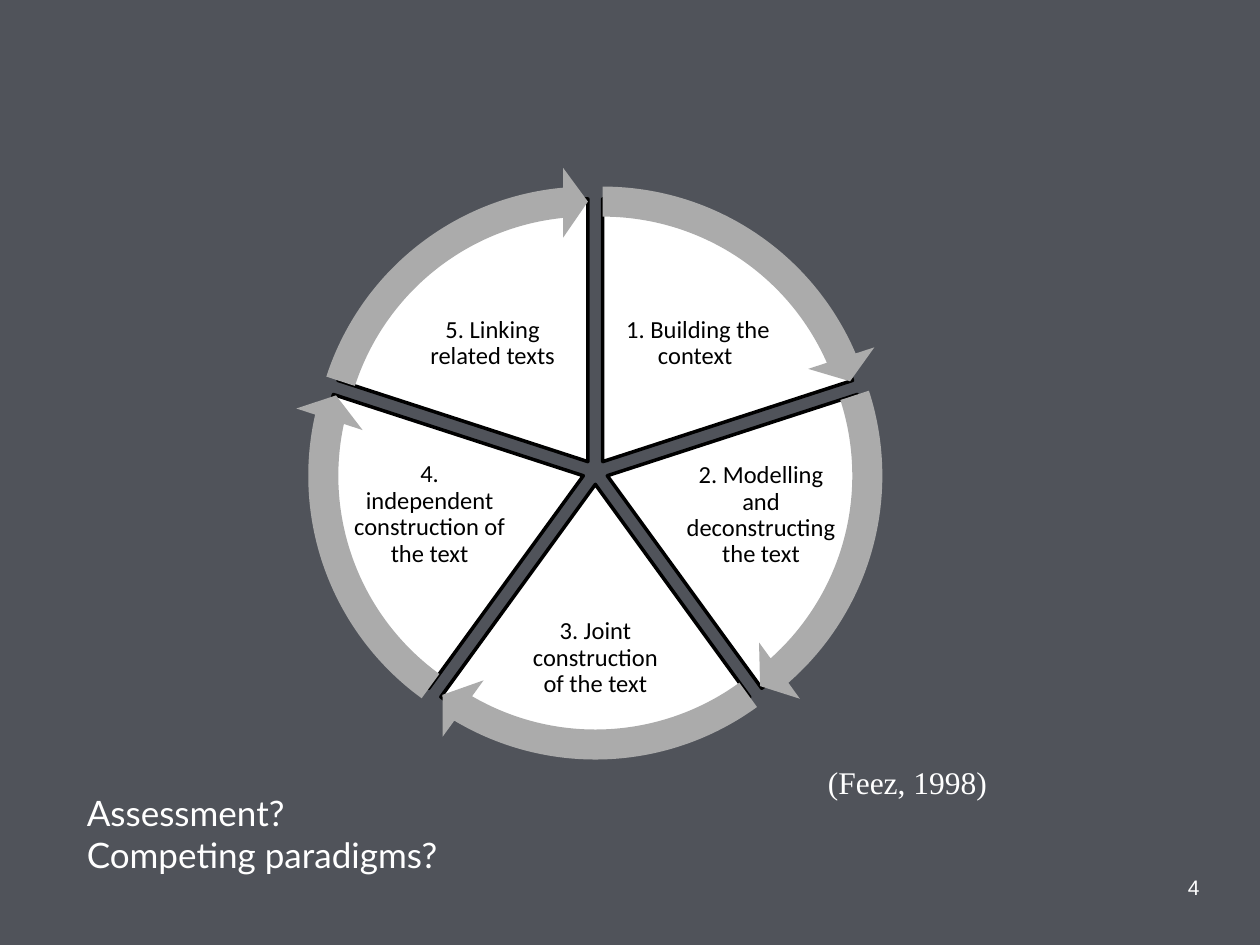
"""Build a slide showing a five-stage teaching cycle."""
from dataclasses import dataclass
from math import cos, radians, sin

from pptx import Presentation
from pptx.dml.color import RGBColor as Color
from pptx.enum.shapes import MSO_SHAPE as Preset
from pptx.enum.text import MSO_ANCHOR as Anchor, PP_ALIGN as Align
from pptx.util import Inches, Pt


@dataclass(frozen=True)
class Theme:
    background: Color = Color(0x50, 0x53, 0x5A)
    light: Color = Color(0xFF, 0xFF, 0xFF)
    dark: Color = Color(0, 0, 0)
    arrow: Color = Color(0xAB, 0xAB, 0xAB)
    label_size: int = 14
    question_size: int = 20
    citation_size: int = 18
    number_size: int = 12
    label_font: str = "Calibri"
    question_font: str = "Lato"
    citation_font: str = "Times New Roman"
    number_font: str = "Arial"


THEME = Theme()
COLUMNS, ROWS = 100, 75
CELL = Inches(0.1)
HUB = (47.25, 37.45)
SLICE_OFFSET = 1
PIE_SIZE, ARROW_SIZE = 41.7, 46.8
SWEEP = 72
ARROW_SWEEP = 66.54
DEGREE = 0.6
STAGES = [
    ("1. Building the context ", (48.7, 22.8, 13.4, 8.9)),
    ("2. Modelling and deconstructing the text", (54.2, 35.9, 12.4, 10)),
    ("3. Joint construction of the text", (41.3, 46.8, 11.9, 10.9)),
    ("4. independent construction of the text", (27.9, 35.9, 12.4, 9.9)),
    ("5. Linking related texts", (32.4, 22.8, 13.4, 8.9)),
]


def grid(*cells):
    """Turn grid cells into slide lengths."""
    return [round(cell * CELL) for cell in cells]


def add_text(shapes, box, lines, font, size, color, align=Align.LEFT, inset=0):
    """Add a wrapped text box with one paragraph per line and return its frame."""
    frame = shapes.add_textbox(*grid(*box)).text_frame
    frame.word_wrap = True
    if inset is not None:
        frame.margin_left = frame.margin_right = Inches(inset)
        frame.margin_top = frame.margin_bottom = Inches(inset)
    for index, line in enumerate(lines):
        paragraph = frame.add_paragraph() if index else frame.paragraphs[0]
        paragraph.alignment = align
        run = paragraph.add_run()
        run.text = line
        run.font.name, run.font.size = font, Pt(size)
        run.font.color.rgb = color
    return frame


def add_round(shapes, preset, index, size, fill, adjustments):
    """Add a round shape pushed out from the hub along its stage's bisector."""
    bisector = radians(270 + SWEEP * (index + 0.5))
    left = HUB[0] + SLICE_OFFSET * cos(bisector) - size / 2
    top = HUB[1] + SLICE_OFFSET * sin(bisector) - size / 2
    shape = shapes.add_shape(preset, *grid(left, top, size, size))
    shape.shadow.inherit = False
    shape.fill.solid()
    shape.fill.fore_color.rgb = fill
    for position, value in enumerate(adjustments):
        shape.adjustments[position] = value
    return shape


def add_slice(shapes, index):
    """Add the outlined pie slice of one stage."""
    start = 270 + SWEEP * index
    angles = [angle % 360 * DEGREE for angle in (start, start + SWEEP)]
    piece = add_round(shapes, Preset.PIE, index, PIE_SIZE, THEME.light, angles)
    piece.line.color.rgb = THEME.dark
    piece.line.width = Pt(2)


def add_label(shapes, text, box):
    """Add the centred label of one stage."""
    frame = add_text(shapes, box, [text], THEME.label_font, THEME.label_size,
                     THEME.dark, Align.CENTER, 0.02)
    frame.vertical_anchor = Anchor.MIDDLE
    frame.paragraphs[0].line_spacing = 0.9


def add_arrow(shapes, index):
    """Add the circular arrow along the rim of one stage."""
    start = (270 + SWEEP * index) % 360
    end = (start + ARROW_SWEEP) % 360
    adjustments = [0.051, 3.275, end * DEGREE, start * DEGREE, 0.059]
    arrow = add_round(shapes, Preset.CIRCULAR_ARROW, index, ARROW_SIZE,
                      THEME.arrow, adjustments)
    arrow.line.fill.background()


def add_cycle(slide):
    """Add the grouped cycle with its slices, labels and arrows."""
    shapes = slide.shapes.add_group_shape().shapes
    for index, (text, box) in enumerate(STAGES):
        add_slice(shapes, index)
        add_label(shapes, text, box)
    for index in range(len(STAGES)):
        add_arrow(shapes, index)


def main():
    """Build and save the slide."""
    presentation = Presentation()
    presentation.slide_width, presentation.slide_height = grid(COLUMNS, ROWS)
    slide = presentation.slides.add_slide(presentation.slide_layouts[6])
    slide.background.fill.solid()
    slide.background.fill.fore_color.rgb = THEME.background
    add_text(slide.shapes, (87.8, 69.4, 7.4, 2.8), ["4"], THEME.number_font,
             THEME.number_size, THEME.light, Align.RIGHT)
    add_text(slide.shapes, (65.7, 60.6, 26.9, 3), ["(Feez, 1998)"],
             THEME.citation_font, THEME.citation_size, THEME.light)
    add_cycle(slide)
    add_text(slide.shapes, (5.9, 62.3, 33.9, 7.7),
             ["Assessment?", "Competing paradigms?"], THEME.question_font,
             THEME.question_size, THEME.light, inset=None)
    presentation.save("out.pptx")


if __name__ == "__main__":
    main()
